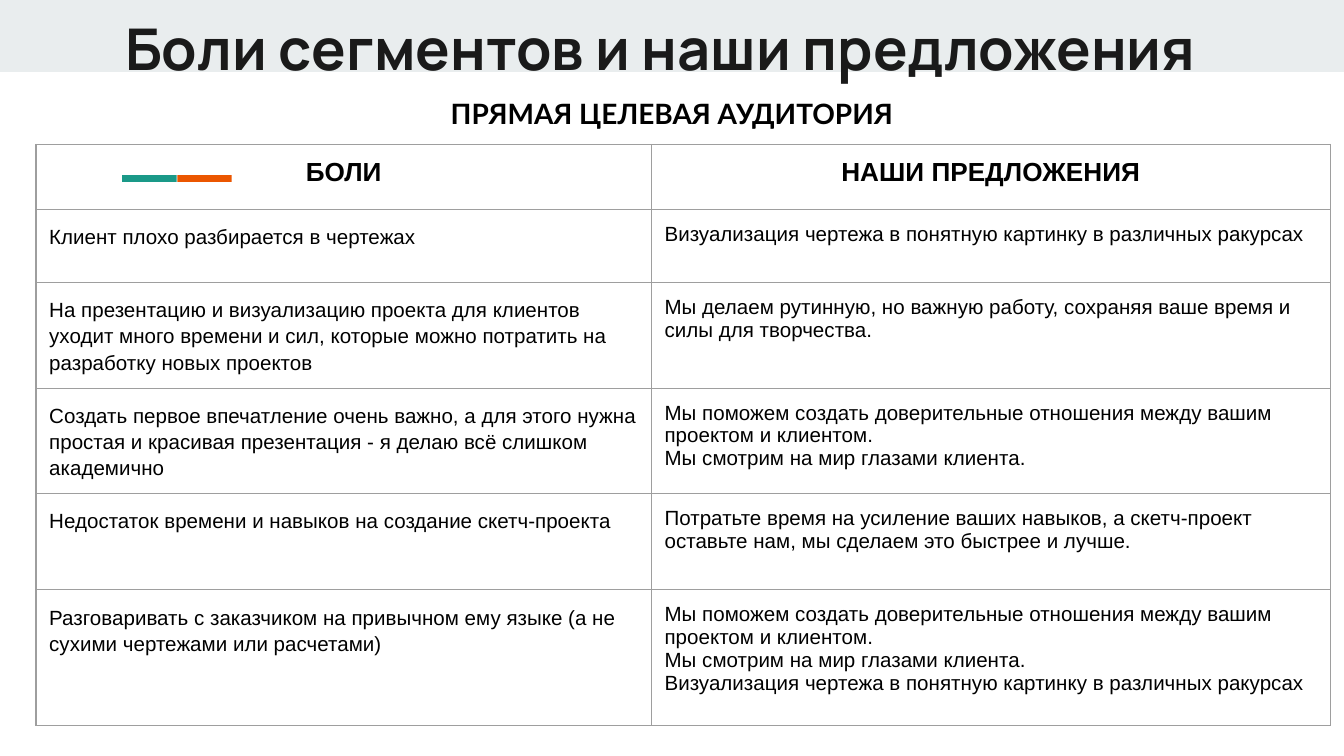
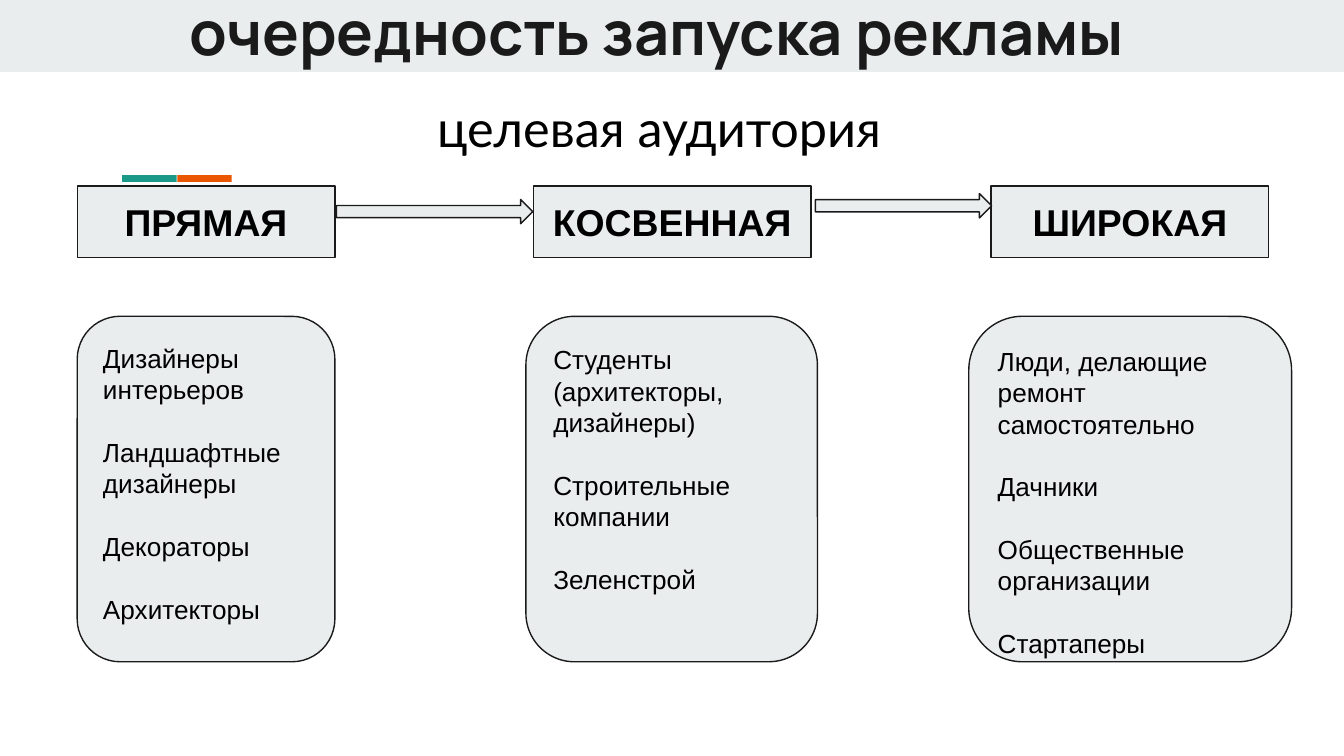
import pptx
import pptx.util
import pptx.dml.color
import pptx.enum.shapes
import pptx.enum.text
import pptx.oxml.ns
from lxml import etree

Cm = pptx.util.Cm
Pt = pptx.util.Pt
SHAPES = pptx.enum.shapes.MSO_SHAPE
ALIGN = pptx.enum.text.PP_ALIGN
ANCHOR = pptx.enum.text.MSO_ANCHOR
qn = pptx.oxml.ns.qn

PALE, INK, BLACK = "E9EDEE", "1A1A1A", "000000"
TEAL, ORANGE, GRID = "1A9988", "EB5600", "9E9E9E"
INSET = 0.25

TRUST = "Мы поможем создать доверительные отношения между вашим проектом и клиентом."
CLIENT_EYES = "Мы смотрим на мир глазами клиента."
VISUAL = "Визуализация чертежа в понятную картинку в различных ракурсах"

HEADINGS = ("БОЛИ", "НАШИ ПРЕДЛОЖЕНИЯ")
PAINS_AND_OFFERS = [
    ("Клиент плохо разбирается в чертежах", [VISUAL]),
    ("На презентацию и визуализацию проекта для клиентов уходит много времени и сил, "
     "которые можно потратить на разработку новых проектов",
     ["Мы делаем рутинную, но важную работу, сохраняя ваше время и силы для творчества."]),
    ("Создать первое впечатление очень важно, а для этого нужна простая и красивая "
     "презентация - я делаю всё слишком академично", [TRUST, CLIENT_EYES]),
    ("Недостаток времени и навыков на создание скетч-проекта",
     ["Потратьте время на усиление ваших навыков, а скетч-проект оставьте нам, "
      "мы сделаем это быстрее и лучше."]),
    ("Разговаривать с заказчиком на привычном ему языке (а не сухими чертежами или расчетами)",
     [TRUST, CLIENT_EYES, VISUAL]),
]
COLUMN_WIDTHS = (11.63, 12.83)
ROW_HEIGHTS = (1.23, 1.38, 2.0, 1.99, 1.82, 2.57)

AUDIENCES = [
    {"name": "ПРЯМАЯ", "label": (1.46, 4.87), "card": (1.46, 4.87),
     "groups": ["Дизайнеры интерьеров", "Ландшафтные дизайнеры", "Декораторы", "Архитекторы"]},
    {"name": "КОСВЕННАЯ", "label": (10.08, 5.25), "card": (9.94, 5.51),
     "groups": ["Студенты (архитекторы, дизайнеры)", "Строительные компании", "Зеленстрой"]},
    {"name": "ШИРОКАЯ", "label": (18.73, 5.25), "card": (18.31, 6.1),
     "groups": ["Люди, делающие ремонт самостоятельно", "Дачники",
                "Общественные организации", "Стартаперы"]},
]
ARROWS = [(6.36, 3.77, 3.71), (15.41, 3.66, 3.33)]

ACCENT_AREA = (2.31, 3.31, 2.07, 0.13)
ACCENT_SCALE = (2.96, 0.07)
ACCENT_LENGTH = 1.47


def color(value):
    return pptx.dml.color.RGBColor.from_string(value)


def write(frame, lines, size=14, font="Arial", ink=BLACK, bold=False,
          align=ALIGN.LEFT, spacing=None, gap=0):
    for index, line in enumerate(lines):
        para = frame.paragraphs[0] if index == 0 else frame.add_paragraph()
        para.alignment = align
        if spacing:
            para.line_spacing = spacing
        if index and gap:
            para.space_before = Pt(gap)
        span = para.add_run()
        span.text = line
        span.font.size = Pt(size)
        span.font.name = font
        span.font.bold = bold
        span.font.color.rgb = color(ink)


def set_frame(frame, anchor):
    frame.word_wrap = True
    frame.vertical_anchor = anchor
    frame.margin_left = frame.margin_right = Cm(INSET)
    frame.margin_top = frame.margin_bottom = Cm(INSET)


def add_text(page, area, text, anchor=ANCHOR.TOP, **style):
    box = page.shapes.add_textbox(*map(Cm, area))
    set_frame(box.text_frame, anchor)
    write(box.text_frame, [text], align=ALIGN.CENTER, **style)


def add_figure(parent, kind, area, fill=PALE, outline=INK):
    shape = parent.shapes.add_shape(kind, *map(Cm, area))
    shape.shadow.inherit = False
    shape.fill.solid()
    shape.fill.fore_color.rgb = color(fill)
    if outline:
        shape.line.color.rgb = color(outline)
        shape.line.width = Pt(0.75)
    else:
        shape.line.fill.background()
    return shape


def add_accent(page):
    group = page.shapes.add_group_shape()
    width, thickness = ACCENT_SCALE
    half = ACCENT_LENGTH / 2
    for center, fill in ((width - half, ORANGE), (half, TEAL)):
        area = (center - thickness / 2, thickness / 2 - half, thickness, ACCENT_LENGTH)
        add_figure(group, SHAPES.RECTANGLE, area, fill, None).rotation = 270
    group.left, group.top, group.width, group.height = map(Cm, ACCENT_AREA)
    frame = group._element.grpSpPr.find(qn("a:xfrm"))
    for name in ("x", "y"):
        frame.find(qn("a:chOff")).set(name, "0")
    for name, length in zip(("cx", "cy"), ACCENT_SCALE):
        frame.find(qn("a:chExt")).set(name, str(Cm(length)))


def add_page(deck, title, area, size, anchor):
    page = deck.slides.add_slide(deck.slide_layouts[6])
    add_figure(page, SHAPES.RECTANGLE, (0, 0, 25.4, 1.36), PALE, None)
    add_accent(page)
    add_text(page, area, title, anchor, size=size, font="Manrope", ink=INK, bold=True)
    return page


def add_borders(cell):
    properties = cell._tc.get_or_add_tcPr()
    for position, side in enumerate(("a:lnL", "a:lnR", "a:lnT", "a:lnB")):
        line = etree.Element(qn(side), w=str(Pt(0.75)))
        fill = etree.SubElement(line, qn("a:solidFill"))
        etree.SubElement(fill, qn("a:srgbClr"), val=GRID)
        properties.insert(position, line)


def fill_cell(cell, lines, bottom=INSET, **style):
    cell.margin_left = cell.margin_right = cell.margin_top = Cm(INSET)
    cell.margin_bottom = Cm(bottom)
    cell.fill.background()
    add_borders(cell)
    write(cell.text_frame, lines, **style)


def build_offers(deck):
    page = add_page(deck, "Боли сегментов и наши предложения",
                    (1.81, 0, 21.36, 1.57), 30.8, ANCHOR.TOP)
    holder = page.shapes.add_table(
        len(ROW_HEIGHTS), len(COLUMN_WIDTHS), Cm(0.68), Cm(2.73),
        Cm(sum(COLUMN_WIDTHS)), Cm(sum(ROW_HEIGHTS)))
    table = holder.table
    table.first_row = table.horz_banding = False
    for column, width in zip(table.columns, COLUMN_WIDTHS):
        column.width = Cm(width)
    for row, height in zip(table.rows, ROW_HEIGHTS):
        row.height = Cm(height)
    for index, heading in enumerate(HEADINGS):
        fill_cell(table.cell(0, index), [heading], bold=True, align=ALIGN.CENTER)
    for index, (pain, offers) in enumerate(PAINS_AND_OFFERS, 1):
        fill_cell(table.cell(index, 0), [pain], bottom=0.1, size=11, spacing=1.15)
        fill_cell(table.cell(index, 1), offers, size=11)
    add_text(page, (6.4, 1.57, 12.6, 1.14), "ПРЯМАЯ ЦЕЛЕВАЯ АУДИТОРИЯ",
             size=15, font="Lato", bold=True)


def build_launch_order(deck):
    page = add_page(deck, "очередность запуска рекламы",
                    (1.73, 0, 21.36, 1.19), 32.8, ANCHOR.MIDDLE)
    for audience in AUDIENCES:
        left, width = audience["label"]
        label = add_figure(page, SHAPES.RECTANGLE, (left, 3.52, width, 1.35))
        set_frame(label.text_frame, ANCHOR.MIDDLE)
        write(label.text_frame, [audience["name"]], size=20, bold=True, align=ALIGN.CENTER)
        left, width = audience["card"]
        card = add_figure(page, SHAPES.ROUNDED_RECTANGLE, (left, 5.98, width, 6.53))
        set_frame(card.text_frame, ANCHOR.TOP)
        write(card.text_frame, audience["groups"], gap=16.8)
    add_text(page, (6.6, 1.85, 11.71, 1.12), "целевая аудитория",
             ANCHOR.MIDDLE, size=27, font="Lato")
    for left, top, width in ARROWS:
        add_figure(page, SHAPES.RIGHT_ARROW, (left, top, width, 0.46))


def main():
    deck = pptx.Presentation()
    deck.slide_width, deck.slide_height = Cm(25.4), Cm(14.29)
    build_offers(deck)
    build_launch_order(deck)
    deck.save("out.pptx")


if __name__ == "__main__":
    main()
